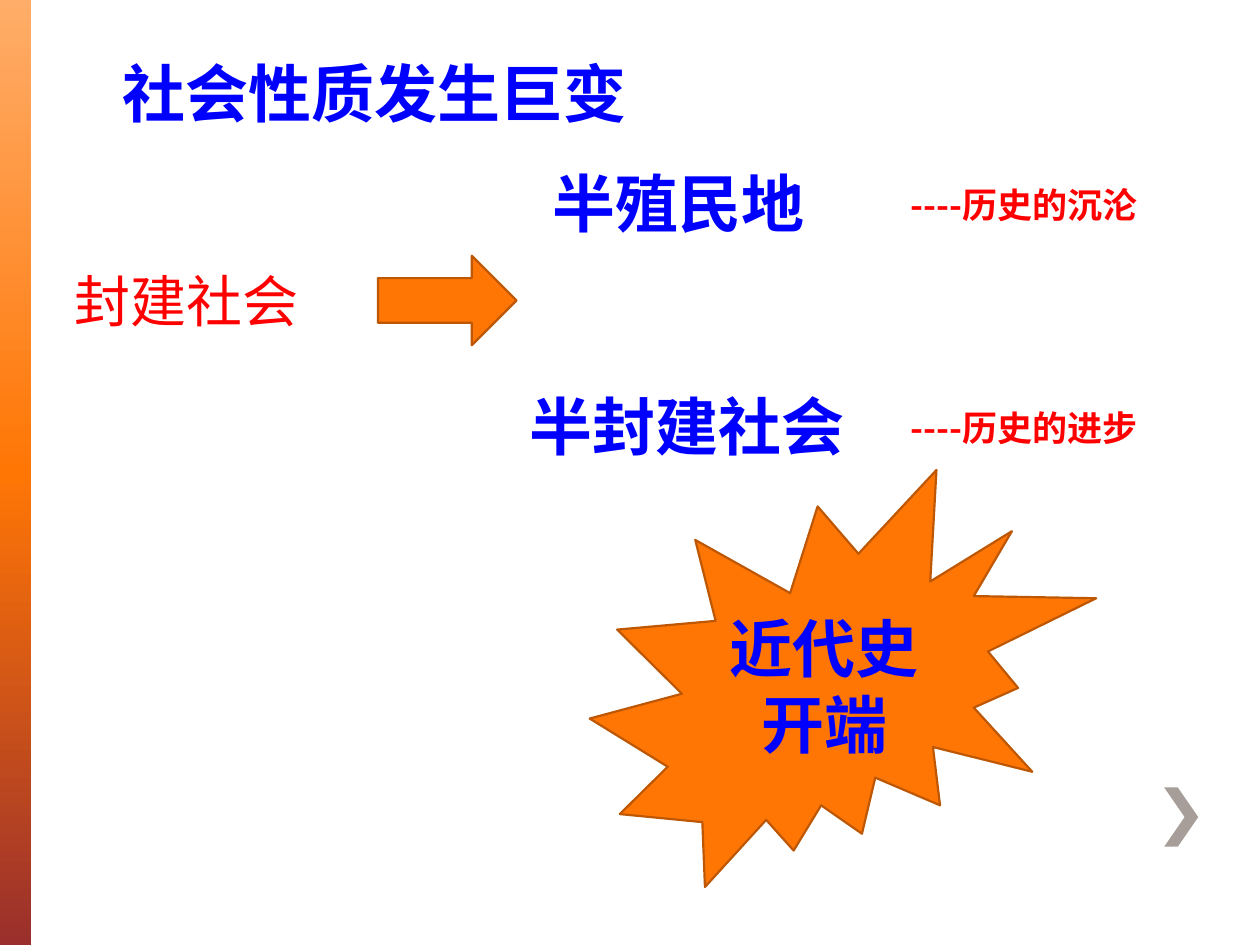
import copy
from dataclasses import dataclass

import pptx
import pptx.dml.color
import pptx.enum.shapes
import pptx.enum.text
import pptx.oxml.ns
import pptx.util
from lxml import etree

RGBColor = pptx.dml.color.RGBColor
Shape = pptx.enum.shapes.MSO_SHAPE
Align = pptx.enum.text.PP_ALIGN
Anchor = pptx.enum.text.MSO_ANCHOR
Inches = pptx.util.Inches

BLUE = RGBColor(0x00, 0x00, 0xFF)
RED = RGBColor(0xFF, 0x00, 0x00)
PEACH = RGBColor(0xFF, 0xAD, 0x69)
ORANGE = RGBColor(0xFF, 0x76, 0x05)
BROWN = RGBColor(0xBD, 0x57, 0x04)
MAROON = RGBColor(0x9A, 0x2F, 0x2C)
GREY = RGBColor(0xA7, 0x9D, 0x99)

CJK = "Noto Sans CJK SC"
HEADING = {"size": pptx.util.Pt(36), "bold": True, "name": CJK, "color": BLUE}
REMARK = {"size": pptx.util.Pt(20), "bold": True, "name": CJK, "color": RED}
ORIGIN = {"size": pptx.util.Pt(32), "bold": False, "name": "Calibri", "color": RED}


@dataclass
class Box:
    """A rectangle in inches."""
    left: float
    top: float
    width: float
    height: float

    def inner(self, left, top, width, height):
        return Box(self.left + left, self.top + top, width, height)

    def lengths(self):
        return [Inches(v) for v in (self.left, self.top, self.width, self.height)]


def write(frame, text, style, align=Align.LEFT, anchor=Anchor.TOP, wrap=False):
    frame.word_wrap = wrap
    frame.vertical_anchor = anchor
    para = frame.paragraphs[0]
    para.alignment = align
    span = para.add_run()
    span.text = text
    for name, value in style.items():
        if name == "color":
            span.font.color.rgb = value
        else:
            setattr(span.font, name, value)
    if style["name"] == CJK:
        east_asian = etree.SubElement(span.font._element, pptx.oxml.ns.qn("a:ea"))
        east_asian.set("typeface", CJK)


def add_label(page, box, text, style, wrap=False):
    label = page.shapes.add_textbox(*box.lengths())
    write(label.text_frame, text, style, wrap=wrap)


def add_solid(page, kind, box):
    shape = page.shapes.add_shape(kind, *box.lengths())
    shape.shadow.inherit = False
    shape.fill.solid()
    shape.fill.fore_color.rgb = ORANGE
    shape.line.color.rgb = BROWN
    shape.line.width = pptx.util.Pt(1.25)
    return shape


def add_side_band(page, box):
    band = page.shapes.add_shape(Shape.RECTANGLE, *box.lengths())
    band.shadow.inherit = False
    band.line.fill.background()
    band.fill.gradient()
    band.fill.gradient_angle = 270
    # The default gradient has two stops; a third is needed
    first = band.fill.gradient_stops[0]._gs
    first.addnext(copy.deepcopy(first))
    stops = ((0, PEACH), (0.5, ORANGE), (1, MAROON))
    for stop, (position, color) in zip(band.fill.gradient_stops, stops):
        stop.position = position
        stop.color.rgb = color


def add_chevron(page, box):
    tip = box.left + box.width
    middle, bottom = box.top + box.height / 2, box.top + box.height
    arm = box.left + 0.4 * box.width
    notch = tip - 0.4 * box.width
    outline = [(tip, middle), (arm, bottom), (box.left, bottom),
               (notch, middle), (box.left, box.top)]
    builder = page.shapes.build_freeform(Inches(arm), Inches(box.top), scale=1.0)
    builder.add_line_segments([(Inches(x), Inches(y)) for x, y in outline])
    chevron = builder.convert_to_shape()
    chevron.shadow.inherit = False
    chevron.fill.solid()
    chevron.fill.fore_color.rgb = GREY
    chevron.line.fill.background()


def add_title(page, box, text):
    title = page.shapes.title
    title.left, title.top, title.width, title.height = box.lengths()
    write(title.text_frame, text, HEADING)


def add_origin(page, box):
    """The old society and the arrow leading away from it."""
    add_label(page, box.inner(0, 0.04, 2.22, 0.63), "封建社会", ORIGIN, wrap=True)
    add_solid(page, Shape.RIGHT_ARROW, box.inner(2.51, 0, 1.1, 0.71))


def add_outcomes(page, box):
    """Each outcome with its remark, one per row."""
    rows = [("半殖民地", 0.19, 2.21, "----历史的沉沦"),
            ("半封建社会", 0, 2.71, "----历史的进步")]
    pitch = box.height / len(rows)
    for index, (outcome, indent, width, remark) in enumerate(rows):
        top = index * pitch
        add_label(page, box.inner(indent, top, width, 0.7), outcome, HEADING)
        add_label(page, box.inner(3.03, top + 0.15, 2.16, 0.43), remark, REMARK)


def add_burst(page, box, text):
    burst = add_solid(page, Shape.EXPLOSION2, box)
    write(burst.text_frame, text, HEADING, Align.CENTER, Anchor.MIDDLE, wrap=True)


def main():
    deck = pptx.Presentation()
    deck.slide_width, deck.slide_height = Inches(10), Inches(7.5)
    page = deck.slides.add_slide(deck.slide_layouts[5])

    # Frame
    add_side_band(page, Box(0, 0, 0.25, 7.5))
    add_chevron(page, Box(9.24, 6.25, 0.27, 0.47))

    # Content
    add_title(page, Box(0.87, 0.38, 4.22, 0.7), "社会性质发生巨变")
    add_origin(page, Box(0.49, 2.03, 3.61, 0.71))
    add_outcomes(page, Box(4.1, 1.26, 5.19, 3.54))
    add_burst(page, Box(4.68, 3.73, 4.02, 3.31), "近代史开端")

    deck.save("out.pptx")


if __name__ == "__main__":
    main()
